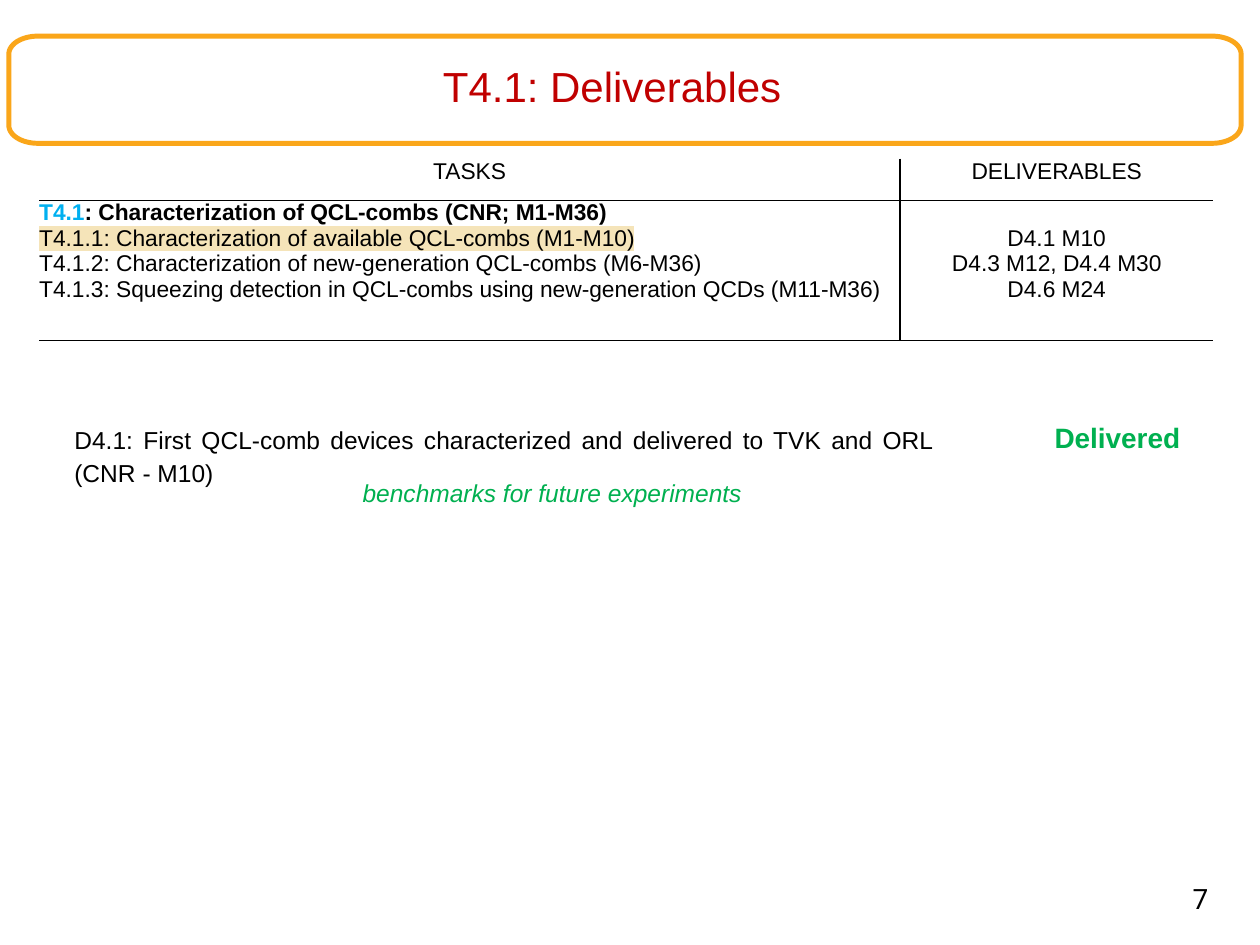
import math
from dataclasses import dataclass

import lxml.etree
import pptx
import pptx.dml.color
import pptx.enum.text
import pptx.oxml
import pptx.oxml.ns
import pptx.util

Cm, Pt = pptx.util.Cm, pptx.util.Pt
ALIGN = pptx.enum.text.PP_ALIGN
ANCHOR = pptx.enum.text.MSO_ANCHOR


@dataclass(frozen=True)
class Theme:
    body_font: str = "Arial"
    number_font: str = "Roboto"
    black: str = "000000"
    title: str = "C00000"
    frame: str = "FAA61A"
    task: str = "00B0F0"
    done: str = "00B050"
    marker: str = "F5E4B9"
    title_size: float = 24
    status_size: float = 16
    note_size: float = 14
    table_size: float = 13


THEME = Theme()

# A paragraph is a list of (text, format) runs.
HEADINGS = ["TASKS", "DELIVERABLES"]
TASKS = [
    [("T4.1", dict(bold=True, color=THEME.task)),
     (": Characterization of QCL-combs (CNR; M1-M36)", dict(bold=True))],
    [("T4.1.1: Characterization of available QCL-combs (M1-M10)",
      dict(highlight=THEME.marker))],
    [("T4.1.2: Characterization of new-generation QCL-combs (M6-M36)", {})],
    [("T4.1.3: Squeezing detection in QCL-combs using new-generation QCDs (M11-M36)", {})],
]
DELIVERABLES = [[(text, {})] for text in
                ("D4.1 M10", "D4.3 M12, D4.4 M30", "D4.6 M24")]

TIGHT = (0.13, 0.13)
# text, (left, top, width, height) in cm, box options, text format
LABELS = [
    ("T4.1: Deliverables", (4.44, 1.34, 15.8, 0.91),
     dict(margins=(0, 0), anchor=ANCHOR.MIDDLE),
     dict(size=THEME.title_size, color=THEME.title, align=ALIGN.CENTER, spacing=0.9)),
    ("7", (23.88, 17.65, 0.61, 0.86), dict(margins=TIGHT, wrap=False),
     dict(size=THEME.status_size, font=THEME.number_font, align=ALIGN.RIGHT)),
    ("D4.1: First QCL-comb devices characterized and delivered to TVK and ORL (CNR - M10)",
     (1.37, 8.35, 17.58, 1.55), dict(margins=TIGHT),
     dict(size=THEME.note_size, align=ALIGN.JUSTIFY, spacing=1.14)),
    ("Delivered", (21.13, 8.35, 2.82, 0.94), dict(margins=TIGHT, wrap=False),
     dict(size=THEME.status_size, color=THEME.done, bold=True)),
    ("benchmarks for future experiments", (7.06, 9.5, 11.91, 0.86), {},
     dict(size=THEME.note_size, color=THEME.done, italic=True)),
]

FRAME_BOX = (0.18, 0.73, 24.84, 2.16)
FRAME_CORNER = (0.58, 0.36)
TABLE_ORIGIN = (0.79, 3.2)
COLUMN_WIDTHS = (17.35, 6.32)
ROW_HEIGHTS = (0.84, 2.82)
TASK_LINE_HEIGHT = 0.51


def rgb(color):
    return pptx.dml.color.RGBColor.from_string(color)


def write_text(frame, paragraphs, size, font=THEME.body_font, color=THEME.black,
               bold=False, italic=False, align=ALIGN.LEFT, spacing=None):
    """Fill a text frame; the format of a run overrides the keyword defaults."""
    for index, runs in enumerate(paragraphs):
        paragraph = frame.add_paragraph() if index else frame.paragraphs[0]
        paragraph.alignment = align
        paragraph.line_spacing = spacing
        for text, style in runs:
            run = paragraph.add_run()
            run.text = text
            run.font.size = Pt(size)
            run.font.name = font
            run.font.bold = style.get("bold", bold)
            run.font.italic = italic
            run.font.color.rgb = rgb(style.get("color", color))
            if "highlight" in style:
                fill = run.font._element.find(pptx.oxml.ns.qn("a:solidFill"))
                fill.addnext(pptx.oxml.parse_xml(
                    f'<a:highlight {pptx.oxml.ns.nsdecls("a")}>'
                    f'<a:srgbClr val="{style["highlight"]}"/></a:highlight>'))


def add_label(slide, text, box, options, style):
    frame = slide.shapes.add_textbox(*map(Cm, box)).text_frame
    side, end = options.get("margins", (0.25, 0.13))
    frame.margin_left = frame.margin_right = Cm(side)
    frame.margin_top = frame.margin_bottom = Cm(end)
    frame.word_wrap = options.get("wrap", True)
    frame.vertical_anchor = options.get("anchor", ANCHOR.TOP)
    write_text(frame, [[(text, {})]], **style)


def add_title_frame(slide, steps=16):
    """Outline whose corners are quarter ellipses, wider than they are high."""
    left, top, width, height = FRAME_BOX
    radius_x, radius_y = FRAME_CORNER
    right, bottom = left + width - radius_x, top + height - radius_y
    centers = [(right, bottom), (left + radius_x, bottom),
               (left + radius_x, top + radius_y), (right, top + radius_y)]
    points = []
    for quarter, (x, y) in enumerate(centers):
        for step in range(steps + 1):
            angle = (quarter + step / steps) * math.pi / 2
            points.append((Cm(x + radius_x * math.cos(angle)),
                           Cm(y + radius_y * math.sin(angle))))
    builder = slide.shapes.build_freeform(*points[0])
    builder.add_line_segments(points[1:], close=True)
    outline = builder.convert_to_shape()
    outline.shadow.inherit = False
    outline.fill.background()
    outline.line.color.rgb = rgb(THEME.frame)
    outline.line.width = Pt(2.83)


def set_borders(cell, sides):
    """Draw the given sides (letters of LRTB) and clear the others."""
    properties = cell._tc.get_or_add_tcPr()
    for position, side in enumerate("LRTB"):
        paint = (f'<a:solidFill><a:srgbClr val="{THEME.black}"/></a:solidFill>'
                 if side in sides else "<a:noFill/>")
        properties.insert(position, pptx.oxml.parse_xml(
            f'<a:ln{side} {pptx.oxml.ns.nsdecls("a")} w="{Pt(1)}">{paint}</a:ln{side}>'))


def add_task_table(slide):
    table = slide.shapes.add_table(
        2, 2, *map(Cm, TABLE_ORIGIN), Cm(sum(COLUMN_WIDTHS)), Cm(sum(ROW_HEIGHTS))).table
    table.first_row = table.horz_banding = False
    for column, width in zip(table.columns, COLUMN_WIDTHS):
        column.width = Cm(width)
    for row, height in zip(table.rows, ROW_HEIGHTS):
        row.height = Cm(height)

    header = [[[(heading, {})]] for heading in HEADINGS]
    for row, contents in enumerate([header, [TASKS, DELIVERABLES]]):
        for column, paragraphs in enumerate(contents):
            cell = table.cell(row, column)
            cell.margin_left = cell.margin_right = cell.margin_top = cell.margin_bottom = 0
            cell.fill.background()
            set_borders(cell, "RL"[column] + "B" + "T" * row)
            is_task_list = paragraphs is TASKS
            write_text(cell.text_frame, paragraphs, THEME.table_size,
                       align=ALIGN.LEFT if is_task_list else ALIGN.CENTER)
    # Deliverables start level with the first subtask.
    table.cell(1, 1).margin_top = Cm(TASK_LINE_HEIGHT)


def main():
    deck = pptx.Presentation()
    deck.slide_width, deck.slide_height = Cm(25.4), Cm(19.05)
    slide = deck.slides.add_slide(deck.slide_layouts[6])
    add_title_frame(slide)
    add_task_table(slide)
    for label in LABELS:
        add_label(slide, *label)
    deck.save("out.pptx")


if __name__ == "__main__":
    main()
